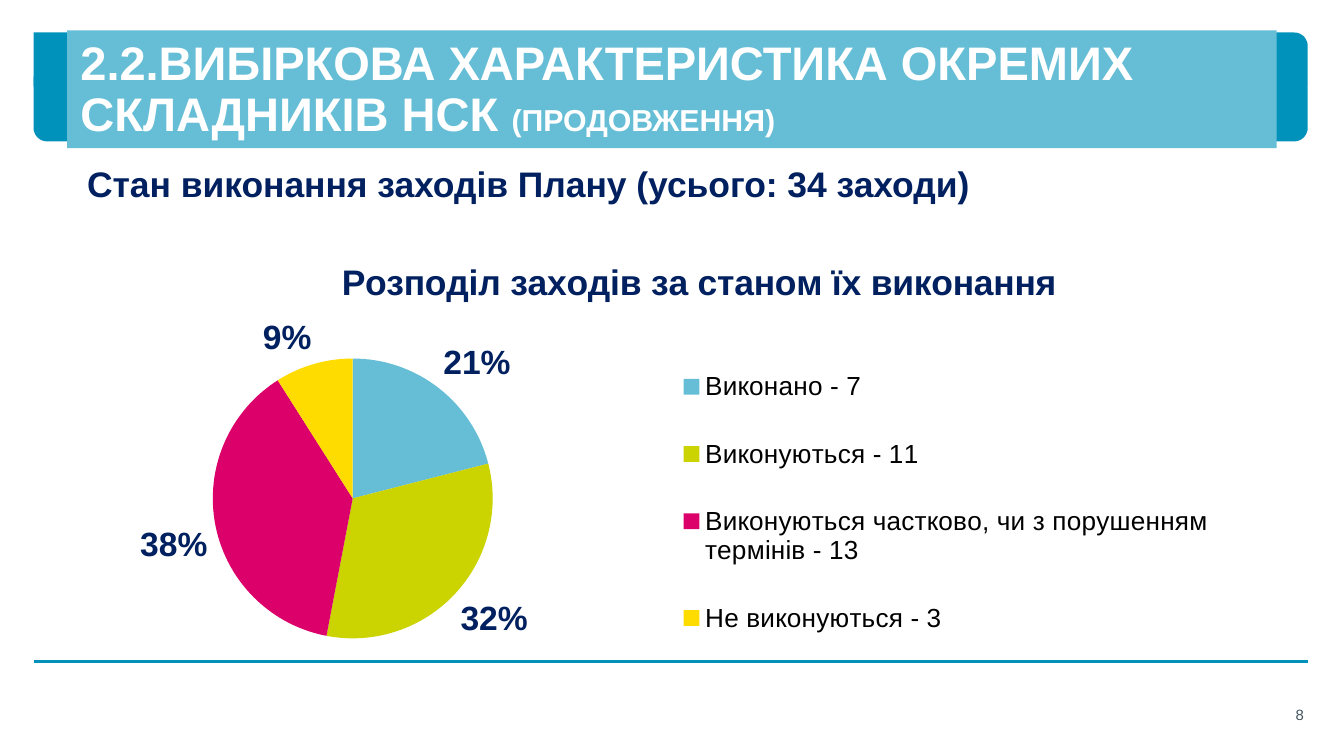
import math
from dataclasses import dataclass

import pptx
import pptx.chart.data
import pptx.dml.color
import pptx.enum.chart
import pptx.enum.shapes
import pptx.enum.text
import pptx.oxml
import pptx.oxml.ns
import pptx.util

RGB = pptx.dml.color.RGBColor
TEAL = RGB(0x00, 0x92, 0xBB)
SKY = RGB(0x66, 0xBE, 0xD6)
LIME = RGB(0xCB, 0xD3, 0x00)
MAGENTA = RGB(0xDC, 0x00, 0x6B)
YELLOW = RGB(0xFF, 0xDC, 0x00)
NAVY = RGB(0x00, 0x20, 0x60)
SLATE = RGB(0x45, 0x55, 0x60)
WHITE = RGB(0xFF, 0xFF, 0xFF)
BLACK = RGB(0x00, 0x00, 0x00)
FONT = "Arial"

WIDTH = pptx.util.Inches(10)
HEIGHT = WIDTH * 9 // 16
CORNER = pptx.util.Inches(0.1)
ANCHOR = pptx.enum.text.MSO_ANCHOR
ALIGN = pptx.enum.text.PP_ALIGN


@dataclass(frozen=True)
class Box:
    """A frame in percent of the slide's width and height."""
    left: float
    top: float
    width: float
    height: float

    def emu(self) -> tuple[int, int, int, int]:
        return (int(self.left * WIDTH / 100), int(self.top * HEIGHT / 100),
                int(self.width * WIDTH / 100), int(self.height * HEIGHT / 100))


@dataclass(frozen=True)
class Run:
    text: str
    size: float
    color: RGB
    bold: bool = True


@dataclass(frozen=True)
class Slice:
    label: str
    percent: int
    color: RGB


BANDS = [Box(2.5, top, 94.8, 8.6) for top in (10.1, 4.3)]
SLICES = [
    Slice("Виконано - 7", 21, SKY),
    Slice("Виконуються - 11", 32, LIME),
    Slice("Виконуються частково, чи з порушенням термінів - 13", 38, MAGENTA),
    Slice("Не виконуються - 3", 9, YELLOW),
]


def style_font(font, size: float, color: RGB, bold: bool) -> None:
    font.name = FONT
    font.size = pptx.util.Pt(size)
    font.bold = bold
    font.color.rgb = color


def add_band(slide, box: Box) -> None:
    """Draw a band with a square top left corner and three round ones."""
    x, y, w, h = box.emu()
    right, bottom = x + w - CORNER, y + h - CORNER
    centres = [(right, y + CORNER, -90), (right, bottom, 0), (x + CORNER, bottom, 90)]
    points = [(cx + CORNER * math.cos(math.radians(start + step)),
               cy + CORNER * math.sin(math.radians(start + step)))
              for cx, cy, start in centres for step in range(0, 91, 10)]
    builder = slide.shapes.build_freeform(x, y)
    builder.add_line_segments(points, close=True)
    sp = builder.convert_to_shape()
    sp.shadow.inherit = False
    sp.fill.solid()
    sp.fill.fore_color.rgb = TEAL
    sp.line.fill.background()


def add_rule(slide, left: float, right: float, top: float) -> None:
    x, y, w, _ = Box(left, top, right - left, 0).emu()
    line = slide.shapes.add_connector(
        pptx.enum.shapes.MSO_CONNECTOR.STRAIGHT, x, y, x + w, y)
    line.line.color.rgb = TEAL
    line.line.width = pptx.util.Pt(1.75)
    line._element.spPr.append(pptx.oxml.parse_xml(
        f"<a:effectLst {pptx.oxml.ns.nsdecls('a')}/>"))


def add_text(slide, box: Box, runs: list[Run], anchor=ANCHOR.TOP,
             align=ALIGN.LEFT, spacing: float = 1.0):
    sp = slide.shapes.add_textbox(*box.emu())
    tf = sp.text_frame
    tf.word_wrap = True
    tf.vertical_anchor = anchor
    p = tf.paragraphs[0]
    p.alignment = align
    p.line_spacing = spacing
    for run in runs:
        r = p.add_run()
        r.text = run.text
        style_font(r.font, run.size, run.color, run.bold)
    return sp


def set_layout(parent, index: int, box: Box, inner: bool = False) -> None:
    """Place a chart part by hand; the box is in percent of the chart."""
    for old in parent.findall(pptx.oxml.ns.qn("c:layout")):
        parent.remove(old)
    target = '<c:layoutTarget val="inner"/>' if inner else ""
    modes = '<c:xMode val="edge"/><c:yMode val="edge"/>'
    sides = zip("xywh", (box.left, box.top, box.width, box.height))
    values = "".join(f'<c:{side} val="{share / 100:.3f}"/>' for side, share in sides)
    parent.insert(index, pptx.oxml.parse_xml(
        f"<c:layout {pptx.oxml.ns.nsdecls('c')}><c:manualLayout>"
        f"{target}{modes}{values}</c:manualLayout></c:layout>"))


def add_pie(slide, box: Box, title: str, slices: list[Slice]) -> None:
    data = pptx.chart.data.CategoryChartData()
    data.categories = [s.label for s in slices]
    data.add_series("Series 1", [s.percent for s in slices])
    chart = slide.shapes.add_chart(
        pptx.enum.chart.XL_CHART_TYPE.PIE, *box.emu(), data).chart
    style_font(chart.font, 10, BLACK, False)

    chart.has_title = True
    chart.chart_title.include_in_layout = False
    p = chart.chart_title.text_frame.paragraphs[0]
    r = p.add_run()
    r.text = title
    style_font(r.font, 19, NAVY, True)
    set_layout(chart.chart_title._element, 1, Box(21.1, 4.3, 58, 9))

    chart.has_legend = True
    chart.legend.position = pptx.enum.chart.XL_LEGEND_POSITION.RIGHT
    chart.legend.include_in_layout = False
    style_font(chart.legend.font, 14, BLACK, False)
    set_layout(chart.legend._element, 1, Box(46.9, 21.1, 47, 69))

    plot = chart.plots[0]
    plot.vary_by_categories = True
    set_layout(plot._element.getparent(), 0, Box(7.1, 26.1, 30.8, 57.4), inner=True)
    series = plot.series[0]
    for i, s in enumerate(slices):
        fmt = series.points[i].format
        fmt.fill.solid()
        fmt.fill.fore_color.rgb = s.color
        fmt.line.fill.background()
    labels = series.data_labels
    labels.show_percentage = True
    labels.show_value = False
    labels.number_format = "0%"
    labels.number_format_is_linked = False
    labels.position = pptx.enum.chart.XL_LABEL_POSITION.OUTSIDE_END
    style_font(labels.font, 18, NAVY, True)


def main() -> None:
    prs = pptx.Presentation()
    prs.slide_width, prs.slide_height = WIDTH, HEIGHT
    slide = prs.slides.add_slide(prs.slide_layouts[6])

    add_rule(slide, 2.5, 97.3, 87.5)
    for band in BANDS:
        add_band(slide, band)
    title = add_text(slide, Box(5, 4, 90, 15.6), [
        Run("2.2.ВИБІРКОВА ХАРАКТЕРИСТИКА ОКРЕМИХ СКЛАДНИКІВ НСК ", 25.2, WHITE),
        Run("(ПРОДОВЖЕННЯ)", 16.2, WHITE),
    ], ANCHOR.BOTTOM, spacing=0.9)
    title.fill.solid()
    title.fill.fore_color.rgb = SKY
    add_text(slide, Box(93.7, 91.8, 4.3, 5.3), [Run("8", 8, SLATE, False)],
             ANCHOR.MIDDLE, ALIGN.RIGHT)
    add_pie(slide, Box(5.5, 30.6, 92.2, 64.5),
            "Розподіл заходів за станом їх виконання", SLICES)
    add_text(slide, Box(5.5, 20.6, 70.3, 7.5),
             [Run("Стан виконання заходів Плану (усього: 34 заходи)", 19, NAVY)])

    prs.save("out.pptx")


if __name__ == "__main__":
    main()
